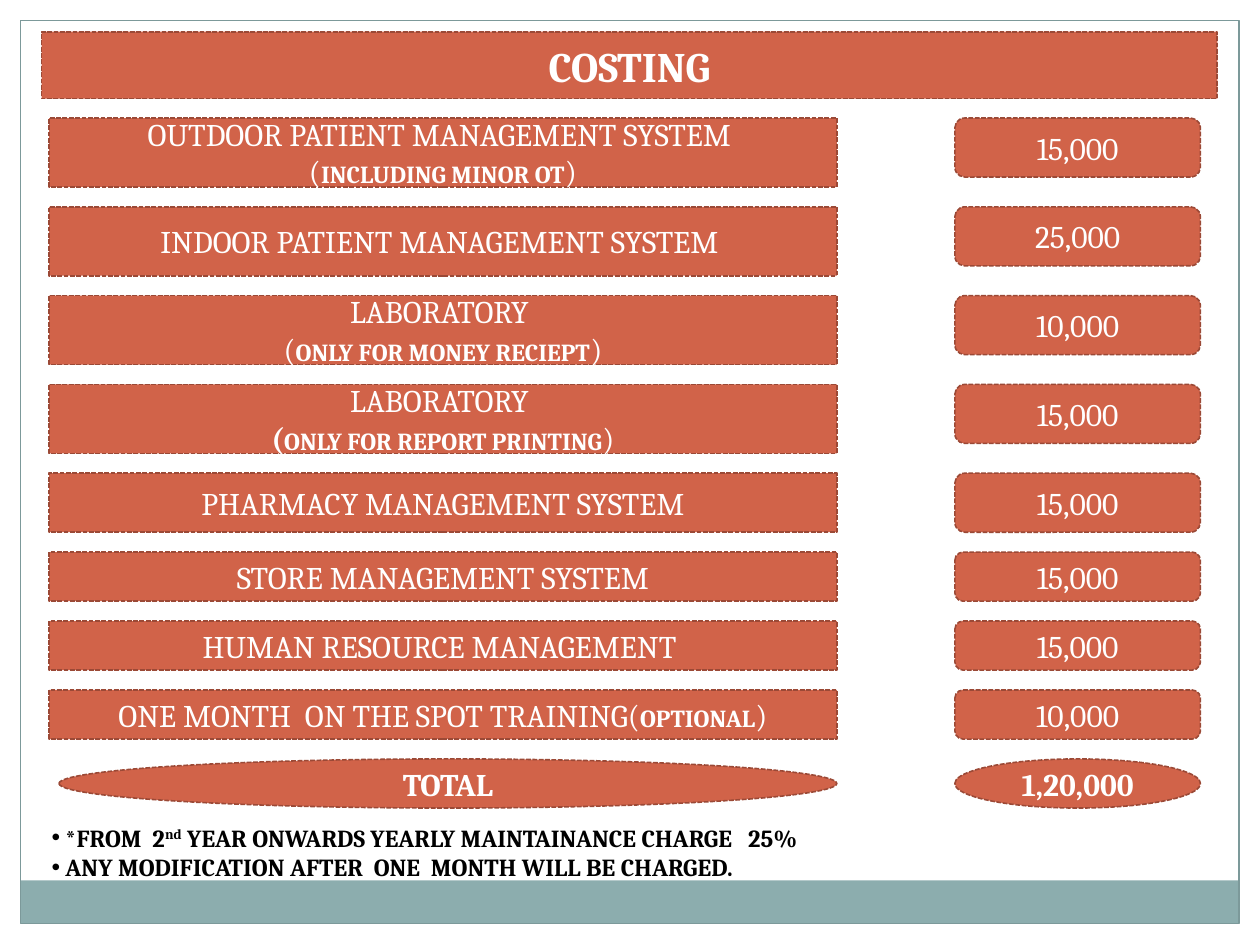
from lxml.etree import SubElement
from pptx import Presentation
from pptx.dml.color import RGBColor
from pptx.enum.dml import MSO_LINE
from pptx.enum.shapes import MSO_SHAPE
from pptx.enum.text import MSO_ANCHOR, PP_ALIGN
from pptx.oxml.ns import qn
from pptx.util import Cm, Pt

FONT = "Cambria"
RUST, BROWN, WHITE, BLACK = "D16349", "9B4936", "FFFFFF", "000000"
TEAL, TEAL_EDGE = "8CADAE", "7C999A"

TALL, MEDIUM, LOW, GAP = 1.39, 1.19, 0.99, 0.4
FIRST_TOP = 2.38
ITEM_LEFT, ITEM_RIGHT = 0.99, 16.87
PRICE_LEFT, PRICE_WIDTH = 19.25, 4.95
TOTAL_LEFT = 1.19


def note(text, opening_bold=False):
    return [("(", 18, opening_bold), (text, 14, True), (")", 18, False)]


def plain(text):
    return [(text, 18, False)]


def strong(text, size=18):
    return [(text, size, True)]


ITEMS = [
    ([plain("OUTDOOR PATIENT MANAGEMENT SYSTEM "), note("INCLUDING MINOR OT")], "15,000", TALL),
    ([plain("INDOOR PATIENT MANAGEMENT SYSTEM ")], "25,000", TALL),
    ([plain("LABORATORY "), note("ONLY FOR MONEY RECIEPT")], "10,000", TALL),
    ([plain("LABORATORY "), note("ONLY FOR REPORT PRINTING", True)], "15,000", TALL),
    ([plain("PHARMACY MANAGEMENT SYSTEM")], "15,000", MEDIUM),
    ([plain("STORE MANAGEMENT SYSTEM")], "15,000", LOW),
    ([plain("HUMAN RESOURCE MANAGEMENT ")], "15,000", LOW),
    ([plain("ONE MONTH  ON THE SPOT TRAINING") + note("OPTIONAL")], "10,000", LOW),
]
TERMS = [
    [("*FROM  2", None), ("nd", "30000"), (" YEAR ONWARDS YEARLY MAINTAINANCE CHARGE   25%", None)],
    [("ANY MODIFICATION AFTER  ONE  MONTH WILL BE CHARGED.", None)],
]


def color(value):
    return RGBColor.from_string(value)


def add_span(para, text, size, bold, ink):
    span = para.add_run()
    span.text = text
    span.font.name = FONT
    span.font.size = Pt(size)
    span.font.bold = bold
    span.font.color.rgb = color(ink)
    return span


def paragraphs(frame, count):
    return [frame.paragraphs[0]] + [frame.add_paragraph() for _ in range(count - 1)]


def style_box(box, lines):
    box.fill.solid()
    box.fill.fore_color.rgb = color(RUST)
    box.line.color.rgb = color(BROWN)
    box.line.width = Pt(0.9)
    box.line.dash_style = MSO_LINE.SQUARE_DOT
    frame = box.text_frame
    frame.word_wrap = True
    frame.vertical_anchor = MSO_ANCHOR.MIDDLE
    for para, spans in zip(paragraphs(frame, len(lines)), lines):
        para.alignment = PP_ALIGN.CENTER
        for text, size, bold in spans:
            add_span(para, text, size, bold, WHITE)


def add_shape(page, kind, left, top, width, height):
    shape = page.shapes.add_shape(kind, Cm(left), Cm(top), Cm(width), Cm(height))
    shape.shadow.inherit = False
    return shape


def add_frame(page):
    band = add_shape(page, MSO_SHAPE.RECTANGLE, 0.42, 17.75, 24.54, 0.87)
    band.fill.solid()
    band.fill.fore_color.rgb = color(TEAL)
    band.line.fill.background()
    border = add_shape(page, MSO_SHAPE.RECTANGLE, 0.42, 0.42, 24.56, 18.2)
    border.fill.background()
    border.line.color.rgb = color(TEAL_EDGE)
    border.line.width = Pt(0.75)


def format_title(title):
    title.left, title.top, title.width, title.height = Cm(0.84), Cm(0.64), Cm(23.7), Cm(1.35)
    properties = title.element.spPr
    geometry = SubElement(properties, qn("a:prstGeom"), prst="roundRect")
    SubElement(geometry, qn("a:avLst"))
    style_box(title, [strong("COSTING", 24)])


def add_price_list(page):
    top = FIRST_TOP
    for lines, price, height in ITEMS:
        item = add_shape(page, MSO_SHAPE.RECTANGLE, ITEM_LEFT, top, ITEM_RIGHT - ITEM_LEFT, height)
        style_box(item, lines)
        amount = add_shape(page, MSO_SHAPE.ROUNDED_RECTANGLE, PRICE_LEFT, top,
                           PRICE_WIDTH, min(height, MEDIUM))
        style_box(amount, [plain(price)])
        top += height + GAP
    for text, left, width in [("TOTAL", TOTAL_LEFT, ITEM_RIGHT - TOTAL_LEFT),
                              ("1,20,000", PRICE_LEFT, PRICE_WIDTH)]:
        total = add_shape(page, MSO_SHAPE.OVAL, left, top, width, LOW)
        style_box(total, [strong(text)])


def add_terms(page):
    box = page.shapes.add_textbox(Cm(0.79), Cm(16.46), Cm(23.62), Cm(1.45))
    frame = box.text_frame
    frame.word_wrap = True
    for para, spans in zip(paragraphs(frame, len(TERMS)), TERMS):
        settings = para._p.get_or_add_pPr()
        settings.set("marL", str(Cm(0.28)))
        settings.set("indent", str(-Cm(0.28)))
        SubElement(settings, qn("a:buFont"), typeface="Arial")
        SubElement(settings, qn("a:buChar"), char="•")
        for text, baseline in spans:
            span = add_span(para, text, 14, True, BLACK)
            if baseline:
                span.font._element.set("baseline", baseline)


def main():
    deck = Presentation()
    deck.slide_width, deck.slide_height = Cm(25.4), Cm(19.05)
    page = deck.slides.add_slide(deck.slide_layouts[5])
    add_frame(page)
    format_title(page.shapes.title)
    add_price_list(page)
    add_terms(page)
    deck.save("out.pptx")


if __name__ == "__main__":
    main()
